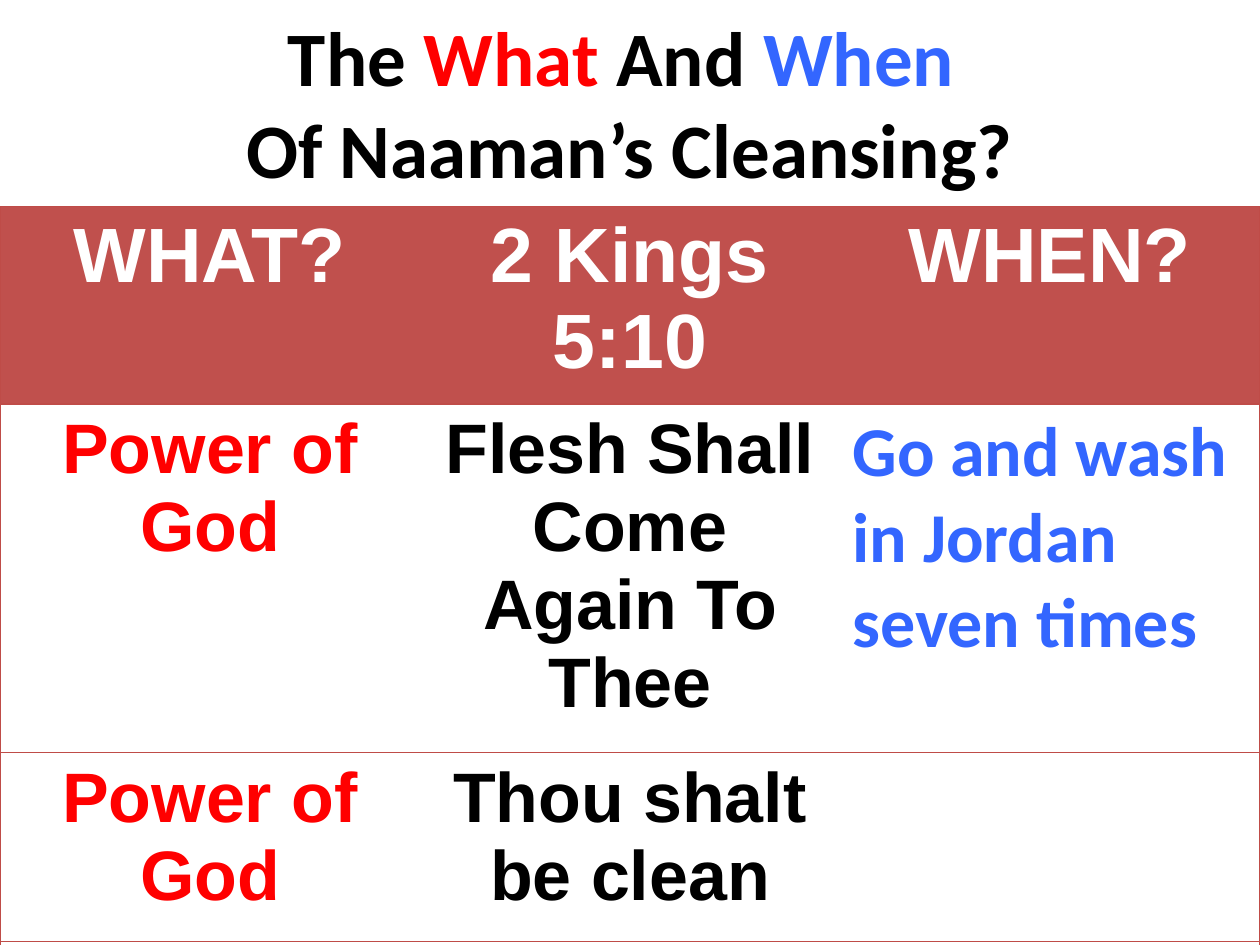
from lxml import etree
from pptx import Presentation
from pptx.dml.color import RGBColor
from pptx.enum import text
from pptx.oxml import ns
from pptx.util import Inches, Pt

BLACK = RGBColor(0x00, 0x00, 0x00)
WHITE = RGBColor(0xFF, 0xFF, 0xFF)
RED = RGBColor(0xFF, 0x00, 0x00)
BLUE = RGBColor(0x33, 0x66, 0xFF)
HEADER = RGBColor(0xC0, 0x50, 0x4D)
BORDER = RGBColor(0xBF, 0x4C, 0x48)
PLAIN_STYLE = "{2D5ABB26-0587-4C30-8999-92F81FD0307C}"
CENTER = text.PP_ALIGN.CENTER

TITLE = [
    [("The ", BLACK), ("What", RED), (" And ", BLACK), ("When ", BLUE)],
    [("Of Naaman’s Cleansing?", BLACK)],
]
ROW_HEIGHTS = [0.83, 2.1, 1.5, 1.39]
ROWS = [
    ["WHAT?", "2 Kings 5:10", "WHEN?"],
    ["Power of God", "Flesh Shall Come Again To Thee",
     "Go and wash in Jordan seven times"],
    ["Power of God", "Thou shalt be clean", ""],
    ["", "", ""],
]
COLUMN_COLORS = [RED, BLACK, BLUE]


def set_font(font, name, size):
    font.name, font.size, font.bold = name, Pt(size), True


def add_title(slide):
    sp = slide.shapes.add_textbox(Inches(0.75), 0, Inches(8.5), Inches(1.61))
    tf = sp.text_frame
    tf.word_wrap = True
    tf.vertical_anchor = text.MSO_ANCHOR.MIDDLE
    p = tf.paragraphs[0]
    p.alignment = CENTER
    set_font(p.font, "Calibri", 44)
    for i, line in enumerate(TITLE):
        if i:
            p.add_line_break()
        for words, color in line:
            r = p.add_run()
            r.text = words
            set_font(r.font, "Calibri", 44)
            r.font.color.rgb = color


def set_borders(cell, sides):
    """Draw thin lines on the given sides; they must precede the fill."""
    tc_pr = cell._tc.get_or_add_tcPr()
    for i, side in enumerate(sides):
        ln = etree.Element(ns.qn(f"a:ln{side}"), w=str(Pt(0.75)))
        fill = etree.SubElement(ln, ns.qn("a:solidFill"))
        etree.SubElement(fill, ns.qn("a:srgbClr"), val=str(BORDER))
        tc_pr.insert(i, ln)


def fill_cell(cell, words, row, col):
    header = row == 0
    if header:
        cell.fill.solid()
        cell.fill.fore_color.rgb = HEADER
    else:
        cell.fill.background()
    if words:
        p = cell.text_frame.paragraphs[0]
        p.text = words
        in_last_column = col == 2 and not header
        p.alignment = text.PP_ALIGN.LEFT if in_last_column else CENTER
        set_font(p.font, "Calibri" if in_last_column else "Arial",
                 44 if header else 40)
        p.font.color.rgb = WHITE if header else COLUMN_COLORS[col]
    # Outer frame and row rules, no inner vertical lines
    sides = {0: ["L"], 2: ["R"]}.get(col, []) + ["T", "B"]
    set_borders(cell, sides)


def add_table(slide):
    frame = slide.shapes.add_table(len(ROWS), len(COLUMN_COLORS), 0, Inches(1.64),
                                   Inches(10), Inches(sum(ROW_HEIGHTS)))
    table = frame.table
    table._tbl.tblPr.find(ns.qn("a:tableStyleId")).text = PLAIN_STYLE
    table.horz_banding = False
    for i, (height, row) in enumerate(zip(ROW_HEIGHTS, ROWS)):
        table.rows[i].height = Inches(height)
        for j, words in enumerate(row):
            fill_cell(table.cell(i, j), words, i, j)


def main():
    prs = Presentation()
    prs.slide_width, prs.slide_height = Inches(10), Inches(7.5)
    slide = prs.slides.add_slide(prs.slide_layouts[6])
    add_title(slide)
    add_table(slide)
    prs.save("out.pptx")


if __name__ == "__main__":
    main()
